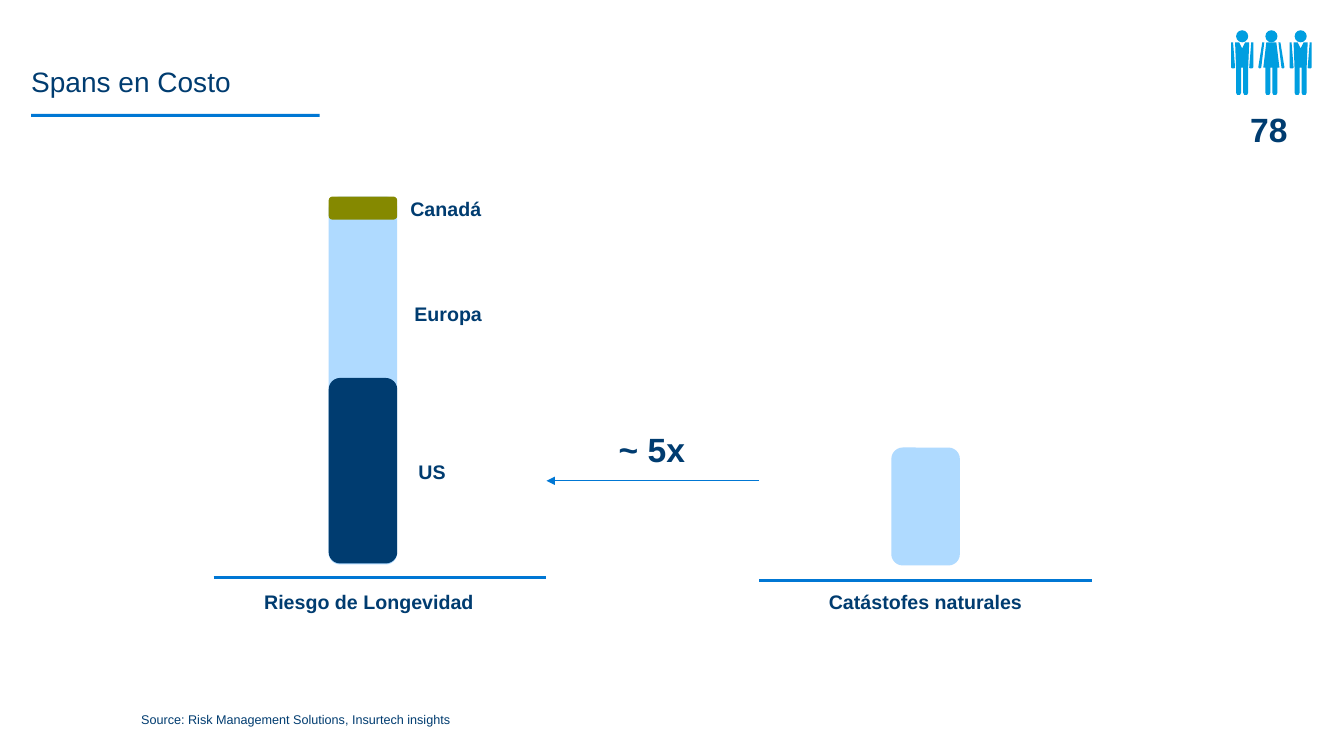
from lxml import etree
from pptx import Presentation
from pptx.dml.color import RGBColor
from pptx.enum import shapes, text
from pptx.oxml.ns import qn
from pptx.util import Inches, Pt

NAVY = RGBColor(0x00, 0x3C, 0x70)
BLUE = RGBColor(0x00, 0x77, 0xD4)
PALE = RGBColor(0xAF, 0xDA, 0xFF)
OLIVE = RGBColor(0x85, 0x89, 0x00)
CYAN = RGBColor(0x00, 0x9E, 0xE0)
LEFT, CENTER = text.PP_ALIGN.LEFT, text.PP_ALIGN.CENTER
TOP, BOTTOM = text.MSO_ANCHOR.TOP, text.MSO_ANCHOR.BOTTOM

prs = Presentation()
prs.slide_width, prs.slide_height = Inches(13.33), Inches(7.5)
s = prs.slides.add_slide(prs.slide_layouts[6])
people = s.shapes.add_group_shape()


def add_text(parent, words, box, size, bold=True, align=LEFT, anchor=TOP):
    sp = parent.add_textbox(*map(Inches, box))
    tf = sp.text_frame
    tf.word_wrap = True
    tf.vertical_anchor = anchor
    tf.margin_left = tf.margin_right = tf.margin_top = tf.margin_bottom = 0
    p = tf.paragraphs[0]
    p.text = words
    p.alignment = align
    p.font.name, p.font.size, p.font.bold = "Arial", Pt(size), bold
    p.font.color.rgb = NAVY


def paint(sp, color):
    sp.shadow.inherit = False
    sp.fill.solid()
    sp.fill.fore_color.rgb = color
    sp.line.fill.background()


# Title, its rule and the source line
add_text(s.shapes, "Spans en Costo", (0.31, 0.3, 12.7, 0.67), 20, False, anchor=BOTTOM)
add_text(s.shapes, "Source: Risk Management Solutions, Insurtech insights",
         (1.4, 7.05, 7.28, 0.16), 9, False, anchor=BOTTOM)

# Filled bars, from back to front
for kind, x, y, w, h, color in [
    (shapes.MSO_SHAPE.RECTANGLE, 0.31, 1.13, 2.86, 0.03, BLUE),
    (shapes.MSO_SHAPE.ROUNDED_RECTANGLE, 3.26, 1.95, 0.68, 3.65, PALE),
    (shapes.MSO_SHAPE.ROUNDED_RECTANGLE, 3.26, 3.75, 0.68, 1.84, NAVY),
    (shapes.MSO_SHAPE.ROUNDED_RECTANGLE, 3.26, 1.95, 0.68, 0.23, OLIVE),
    (shapes.MSO_SHAPE.ROUNDED_RECTANGLE, 8.84, 4.44, 0.68, 1.17, PALE),
]:
    paint(s.shapes.add_shape(kind, Inches(x), Inches(y), Inches(w), Inches(h)), color)

# Region and column labels
for words, x, y in [("Canadá", 4.07, 1.95), ("Europa", 4.11, 3), ("US", 4.15, 4.56)]:
    add_text(s.shapes, words, (x, y, 1, 0.43), 14)
for words, x in [("Riesgo de Longevidad", 2.29), ("Catástofes naturales", 7.81)]:
    add_text(s.shapes, words, (x, 5.85, 2.74, 0.28), 14, align=CENTER)
add_text(s.shapes, "~ 5x", (5.76, 4.26, 1.41, 0.43), 24, align=CENTER)

# Base lines and the comparison arrow
for x1, x2, y, width, arrow in [
    (2.12, 5.42, 5.73, 2.25, False),
    (7.53, 10.83, 5.76, 2.25, False),
    (7.53, 5.42, 4.77, 0.5, True),
]:
    line = s.shapes.add_connector(shapes.MSO_CONNECTOR.STRAIGHT,
                                  Inches(x1), Inches(y), Inches(x2), Inches(y))
    line.line.color.rgb = BLUE
    line.line.width = Pt(width)
    if arrow:
        etree.SubElement(line.line._get_or_add_ln(), qn("a:tailEnd"), type="triangle")
    etree.SubElement(line._element.spPr, qn("a:effectLst"))

# People icon: half outlines around each figure's centre, mirrored to the left
leg = [(0.06, 0.92), (0.05, 0.94), (0.02, 0.94), (0.01, 0.92), (0.01, 0.67)]
man = [(0, 0.48), (0.03, 0.42), (0.07, 0.42), (0.06, 0.67)] + leg
woman = [(0, 0.42), (0.05, 0.42), (0.08, 0.67), (0.06, 0.67)] + leg
man_arm = [(0.09, 0.42), (0.11, 0.42), (0.11, 0.67), (0.1, 0.68), (0.08, 0.68), (0.07, 0.67)]
woman_arm = [(0.07, 0.42), (0.09, 0.42), (0.13, 0.67), (0.12, 0.68), (0.11, 0.68), (0.1, 0.67)]
for cx, body, arm in [(12.32, man, man_arm), (12.61, woman, woman_arm), (12.9, man, man_arm)]:
    head = people.shapes.add_shape(shapes.MSO_SHAPE.OVAL, Inches(cx - 0.06), Inches(0.3),
                                   Inches(0.12), Inches(0.12))
    paint(head, CYAN)
    whole_body = body + [(-x, y) for x, y in reversed(body)]
    for outline in (whole_body, arm, [(-x, y) for x, y in arm]):
        points = [(Inches(cx + x), Inches(y)) for x, y in outline]
        fb = people.shapes.build_freeform(*points[0])
        fb.add_line_segments(points[1:], close=True)
        paint(fb.convert_to_shape(), CYAN)
add_text(people.shapes, "78", (12.18, 1.08, 0.81, 0.46), 24, align=CENTER)

prs.save("out.pptx")
